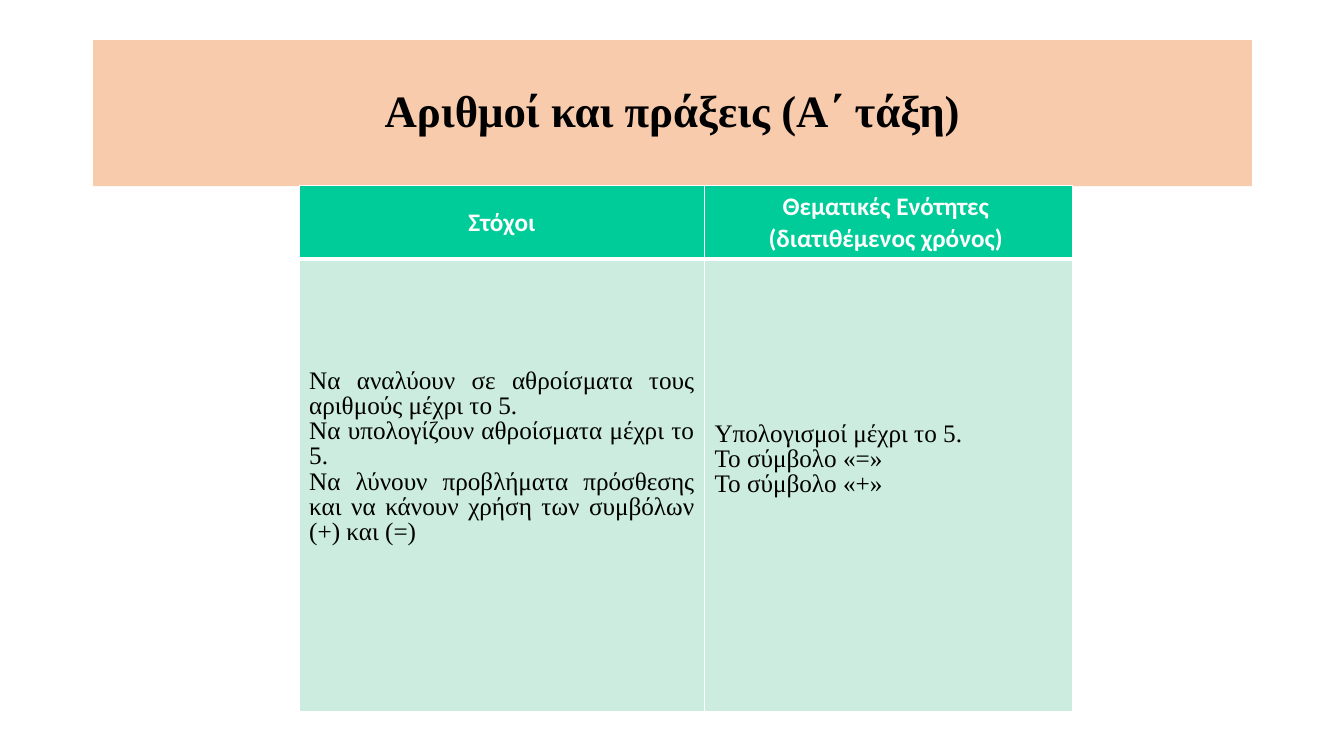
"""Build a slide with a title band and a table of goals and topics."""
from lxml import etree
from pptx import Presentation
from pptx import util as u
from pptx.dml.color import RGBColor
from pptx.enum import text
from pptx.oxml.ns import qn

PX = 9080
SLIDE = (1343, 755)
TITLE = "Αριθμοί και πράξεις (Α΄ τάξη)"
TITLE_BOX = (93, 40, 1158, 146)
TABLE_POS = (299, 185)
COLS = (405, 368)
ROWS = (72, 452)
HEADS = [["Στόχοι"], ["Θεματικές Ενότητες ", "(διατιθέμενος χρόνος) "]]
BODIES = [
    ["Να αναλύουν σε αθροίσματα τους αριθμούς μέχρι το 5.",
     "Να υπολογίζουν αθροίσματα μέχρι το 5.",
     "Να λύνουν προβλήματα πρόσθεσης και να κάνουν χρήση των συμβόλων (+) και (=)"],
    ["Υπολογισμοί μέχρι το 5.", "Το σύμβολο «=»", "Το σύμβολο «+»"],
]
BODY_TOPS = (110, 163)
THIN, THICK = 0.91, 2.95
SERIF, SANS = "Times New Roman", "Calibri"
CENTER, JUSTIFY = text.PP_ALIGN.CENTER, text.PP_ALIGN.JUSTIFY
MIDDLE, TOP = text.MSO_ANCHOR.MIDDLE, text.MSO_ANCHOR.TOP

TITLE_FMT = dict(font=dict(name=SERIF, size=u.Pt(32), bold=True), color="000000",
                 para=dict(alignment=CENTER, line_spacing=0.9))
HEAD_FMT = dict(font=dict(name=SANS, size=u.Pt(18), bold=True), color="FFFFFF",
                para=dict(alignment=CENTER, line_spacing=1.04))
BODY_FMT = dict(font=dict(name=SERIF, size=u.Pt(18), bold=False), color="000000",
                para=dict(alignment=JUSTIFY, line_spacing=0.9))


def px(n):
    return u.Emu(n * PX)


def rgb(value):
    return RGBColor.from_string(value)


def assign(obj, values):
    for name, value in values.items():
        setattr(obj, name, value)


def paint(obj, color):
    obj.fill.solid()
    obj.fill.fore_color.rgb = rgb(color)


def write(tf, lines, fmt):
    for i, line in enumerate(lines):
        p = tf.add_paragraph() if i else tf.paragraphs[0]
        assign(p, fmt["para"])
        r = p.add_run()
        r.text = line
        assign(r.font, fmt["font"])
        r.font.color.rgb = rgb(fmt["color"])


def border(cell, widths, color="FFFFFF"):
    props = cell._tc.get_or_add_tcPr()
    for i, (side, width) in enumerate(zip("LRTB", widths)):
        ln = etree.Element(qn(f"a:ln{side}"), w=str(u.Pt(width)))
        fill = etree.SubElement(ln, qn("a:solidFill"))
        etree.SubElement(fill, qn("a:srgbClr"), val=color)
        props.insert(i, ln)


def fill_cell(cell, lines, fmt, color, anchor, top, widths):
    assign(cell, dict(margin_left=px(10), margin_right=px(10), margin_top=px(top),
                      margin_bottom=px(5), vertical_anchor=anchor))
    paint(cell, color)
    border(cell, widths)
    write(cell.text_frame, lines, fmt)


def main():
    prs = Presentation()
    prs.slide_width, prs.slide_height = map(px, SLIDE)
    s = prs.slides.add_slide(prs.slide_layouts[5])

    title = s.shapes.title
    assign(title, dict(zip(("left", "top", "width", "height"), map(px, TITLE_BOX))))
    paint(title, "F8CBAD")
    assign(title.text_frame, dict(vertical_anchor=MIDDLE, word_wrap=True,
                                  auto_size=text.MSO_AUTO_SIZE.NONE))
    write(title.text_frame, [TITLE], TITLE_FMT)

    size = (sum(COLS), sum(ROWS))
    table = s.shapes.add_table(2, 2, *map(px, TABLE_POS + size)).table
    for row, height in zip(table.rows, ROWS):
        row.height = px(height)
    for i, width in enumerate(COLS):
        table.columns[i].width = px(width)
        fill_cell(table.cell(0, i), HEADS[i], HEAD_FMT, "00CC99", MIDDLE, 5,
                  (THIN, THIN, THIN, THICK))
        fill_cell(table.cell(1, i), BODIES[i], BODY_FMT, "CBECDE", TOP, BODY_TOPS[i],
                  (THIN, THIN, THICK, THIN))
    prs.save("out.pptx")


if __name__ == "__main__":
    main()
